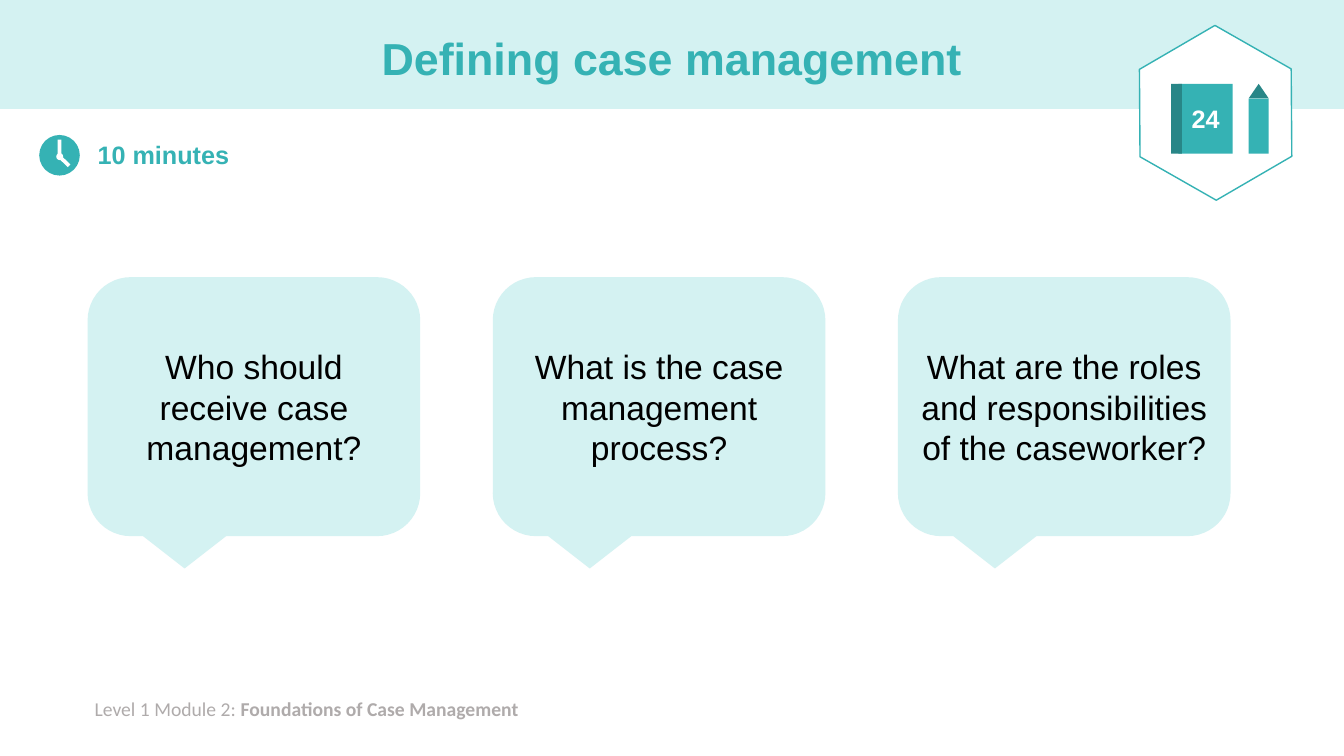
import pptx
import pptx.dml.color
import pptx.enum.shapes
import pptx.enum.text
import pptx.util

Pt = pptx.util.Pt
SHAPE = pptx.enum.shapes.MSO_SHAPE
ALIGN = pptx.enum.text.PP_ALIGN
ANCHOR = pptx.enum.text.MSO_ANCHOR

TEAL = "35B2B4"
DARK_TEAL = "288687"
PALE_TEAL = "D4F2F2"
WHITE = "FFFFFF"
BLACK = "000000"
GREY = "AFABAB"


def color(value):
    """Turn a hex string into a colour."""
    return pptx.dml.color.RGBColor.from_string(value)


def write(frame, text, size=18, ink=BLACK, bold=False, font="Arial",
          align=ALIGN.LEFT, anchor=ANCHOR.TOP, spacing=1.0):
    """Add formatted text to the first paragraph of a frame."""
    frame.word_wrap = True
    frame.vertical_anchor = anchor
    para = frame.paragraphs[0]
    para.alignment = align
    para.line_spacing = spacing
    span = para.add_run()
    span.text = text
    span.font.name = font
    span.font.size = Pt(size)
    span.font.bold = bold
    span.font.color.rgb = color(ink)


class Painter:
    """Hold the current page and draw its elements."""

    def __init__(self, page):
        """Remember the page and the style of centred text."""
        self.page = page
        self.centred = {"align": ALIGN.CENTER, "anchor": ANCHOR.MIDDLE}

    def shape(self, kind, left, top, width, height, fill, line=None, turn=0):
        """Draw a preset shape."""
        box = self.page.shapes.add_shape(kind, Pt(left), Pt(top), Pt(width), Pt(height))
        box.shadow.inherit = False
        box.fill.solid()
        box.fill.fore_color.rgb = color(fill)
        if line:
            box.line.color.rgb = color(line)
            box.line.width = Pt(1)
        else:
            box.line.fill.background()
        box.rotation = turn
        return box

    def text(self, left, top, width, height):
        """Add a text box and return its frame."""
        box = self.page.shapes.add_textbox(Pt(left), Pt(top), Pt(width), Pt(height))
        return box.text_frame

    def badge(self, number):
        """Draw the hexagon with the numbered book and the pencil."""
        hexagon = self.shape(SHAPE.HEXAGON, 805.7, 26.6, 125.3, 108, WHITE, TEAL, 29.7)
        hexagon.adjustments[0] = 0.29
        hexagon.adjustments[1] = 1.155
        book = self.shape(SHAPE.RECTANGLE, 841.7, 59.9, 38.9, 49.9, TEAL)
        frame = book.text_frame
        frame.margin_left = frame.margin_right = 0
        write(frame, number, ink=WHITE, bold=True, **self.centred)
        self.shape(SHAPE.RECTANGLE, 836.6, 59.9, 7.6, 49.9, DARK_TEAL)
        self.shape(SHAPE.ISOSCELES_TRIANGLE, 891.9, 59.9, 14.4, 10.5, DARK_TEAL)
        self.shape(SHAPE.RECTANGLE, 891.9, 70.4, 14.4, 39.4, TEAL)

    def clock(self):
        """Draw the clock face, hub and hands."""
        self.shape(SHAPE.OVAL, 28, 96.4, 29, 29, TEAL)
        self.shape(SHAPE.OVAL, 40.2, 109.4, 5, 5, WHITE)
        self.shape(SHAPE.RECTANGLE, 36.7, 104.2, 11.5, 2.7, WHITE, turn=270)
        self.shape(SHAPE.RECTANGLE, 42.3, 114.2, 8.2, 2.7, WHITE, turn=224.2)

    def question(self, left, text):
        """Draw a speech bubble with a question."""
        bubble = self.shape(SHAPE.ROUNDED_RECTANGULAR_CALLOUT, left, 198, 237.6, 185, PALE_TEAL)
        write(bubble.text_frame, text, size=24, **self.centred)


def main():
    """Build and save the deck."""
    deck = pptx.Presentation()
    deck.slide_width = Pt(960)
    deck.slide_height = Pt(540)
    painter = Painter(deck.slides.add_slide(deck.slide_layouts[6]))

    painter.shape(SHAPE.RECTANGLE, 0, 0, 960, 77.8, PALE_TEAL)
    footer = painter.text(60.5, 494.6, 327.6, 24.5)
    write(footer, "Level 1 Module 2: ", size=14, ink=GREY, font="Calibri")
    write(footer, "Foundations of Case Management", size=14, ink=GREY, font="Calibri", bold=True)
    write(painter.text(66, 9.4, 828, 68.4), "Defining case management",
          size=32, ink=TEAL, bold=True, spacing=0.9, **painter.centred)
    painter.badge("24")
    write(painter.text(62.6, 95.8, 123.1, 28.8), "10 minutes", ink=TEAL, bold=True)
    painter.clock()

    questions = (
        "Who should receive case management?",
        "What is the case management process?",
        "What are the roles and responsibilities of the caseworker?",
    )
    for index, text in enumerate(questions):
        painter.question(62.6 + 289.4 * index, text)

    deck.save("out.pptx")


if __name__ == "__main__":
    main()
